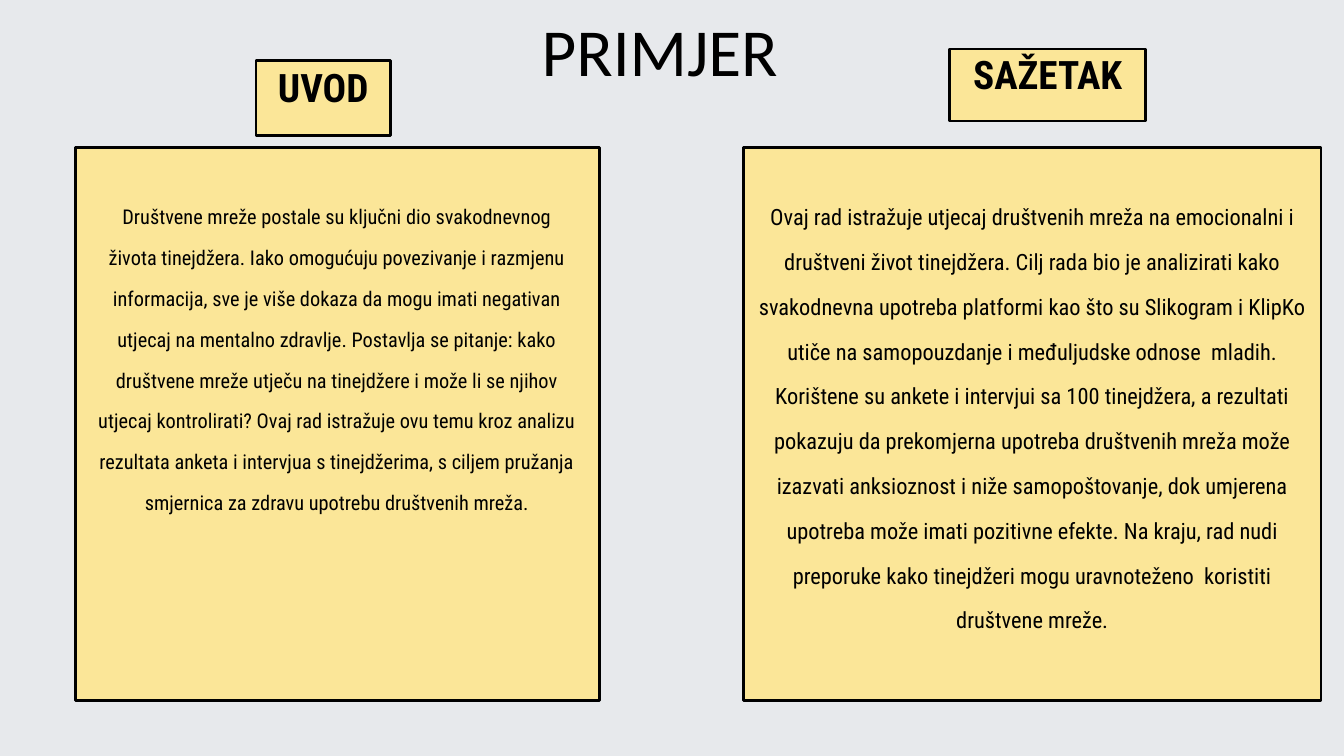
from dataclasses import dataclass

from pptx import Presentation
from pptx.dml.color import RGBColor
from pptx.enum.shapes import MSO_SHAPE
from pptx.enum.text import MSO_ANCHOR, PP_ALIGN
from pptx.util import Pt


@dataclass(frozen=True)
class Theme:
    background: RGBColor = RGBColor(0xE7, 0xE9, 0xEC)
    card: RGBColor = RGBColor(0xFB, 0xE6, 0x98)
    ink: RGBColor = RGBColor(0, 0, 0)
    title_font: str = "Calibri"
    body_font: str = "Roboto Condensed"
    title: float = 72
    heading: float = 42
    intro: float = 21.8
    summary: float = 24
    border: float = 3


theme = Theme()

INTRO = (
    "Društvene mreže postale su ključni dio svakodnevnog života tinejdžera. "
    "Iako omogućuju povezivanje i razmjenu informacija, sve je više dokaza da "
    "mogu imati negativan utjecaj na mentalno zdravlje. Postavlja se pitanje: "
    "kako društvene mreže utječu na tinejdžere i može li se njihov utjecaj "
    "kontrolirati? Ovaj rad istražuje ovu temu kroz analizu rezultata anketa i "
    "intervjua s tinejdžerima, s ciljem pružanja smjernica za zdravu upotrebu "
    "društvenih mreža."
)
SUMMARY = (
    "Ovaj rad istražuje utjecaj društvenih mreža na emocionalni i društveni "
    "život tinejdžera. Cilj rada bio je analizirati kako svakodnevna upotreba "
    "platformi kao što su Slikogram i KlipKo utiče na samopouzdanje i "
    "međuljudske odnose  mladih. Korištene su ankete i intervjui sa 100 "
    "tinejdžera, a rezultati pokazuju da prekomjerna upotreba društvenih mreža "
    "može izazvati anksioznost i niže samopoštovanje, dok umjerena upotreba "
    "može imati pozitivne efekte. Na kraju, rad nudi preporuke kako tinejdžeri "
    "mogu uravnoteženo  koristiti društvene mreže."
)

prs = Presentation()
prs.slide_width, prs.slide_height = Pt(1440), Pt(810)
s = prs.slides.add_slide(prs.slide_layouts[6])
s.background.fill.solid()
s.background.fill.fore_color.rgb = theme.background


def add_card(left, top, width, height):
    sp = s.shapes.add_shape(MSO_SHAPE.RECTANGLE, Pt(left), Pt(top), Pt(width), Pt(height))
    sp.shadow.inherit = False
    sp.fill.solid()
    sp.fill.fore_color.rgb = theme.card
    sp.line.color.rgb = theme.ink
    sp.line.width = Pt(theme.border)


def add_text(text, box, size, leading, font=theme.body_font, bold=False,
             anchor=MSO_ANCHOR.TOP, inset=0):
    tf = s.shapes.add_textbox(*[Pt(v) for v in box]).text_frame
    tf.word_wrap = True
    tf.vertical_anchor = anchor
    tf.margin_left = tf.margin_top = tf.margin_right = tf.margin_bottom = Pt(inset)
    tf.text = text
    p = tf.paragraphs[0]
    p.alignment = PP_ALIGN.CENTER
    p.line_spacing = Pt(leading)
    r = p.runs[0]
    r.font.name, r.font.size, r.font.bold = font, Pt(size), bold
    r.font.color.rgb = theme.ink


add_text("PRIMJER", (115.9, 10, 1182.2, 85.7), theme.title, 86.4, theme.title_font)

# Body cards share one top and height
CARD_TOP, CARD_HEIGHT = 158.4, 592.6
columns = [
    (80.8, 561.2, INTRO, (103.7, 201.6, 514.8, 393.8), theme.intro, 43.7),
    (796.3, 619.2, SUMMARY, (806.4, 198.7, 599, 476.6), theme.summary, 48),
]
for left, width, text, box, size, leading in columns:
    add_card(left, CARD_TOP, width, CARD_HEIGHT)
    add_text(text, box, size, leading)

# Each heading's text frame reaches above its label, which lifts the text
HEADING_LIFT = 37.4
headings = [
    ("UVOD", 274.3, 64.8, 144, 80.6),
    ("SAŽETAK", 1017.4, 52.6, 210.2, 77),
]
for text, left, top, width, height in headings:
    add_card(left, top, width, height)
    add_text(text, (left, top - HEADING_LIFT, width, height + HEADING_LIFT),
             theme.heading, 63, bold=True, anchor=MSO_ANCHOR.MIDDLE, inset=4)

prs.save("out.pptx")
